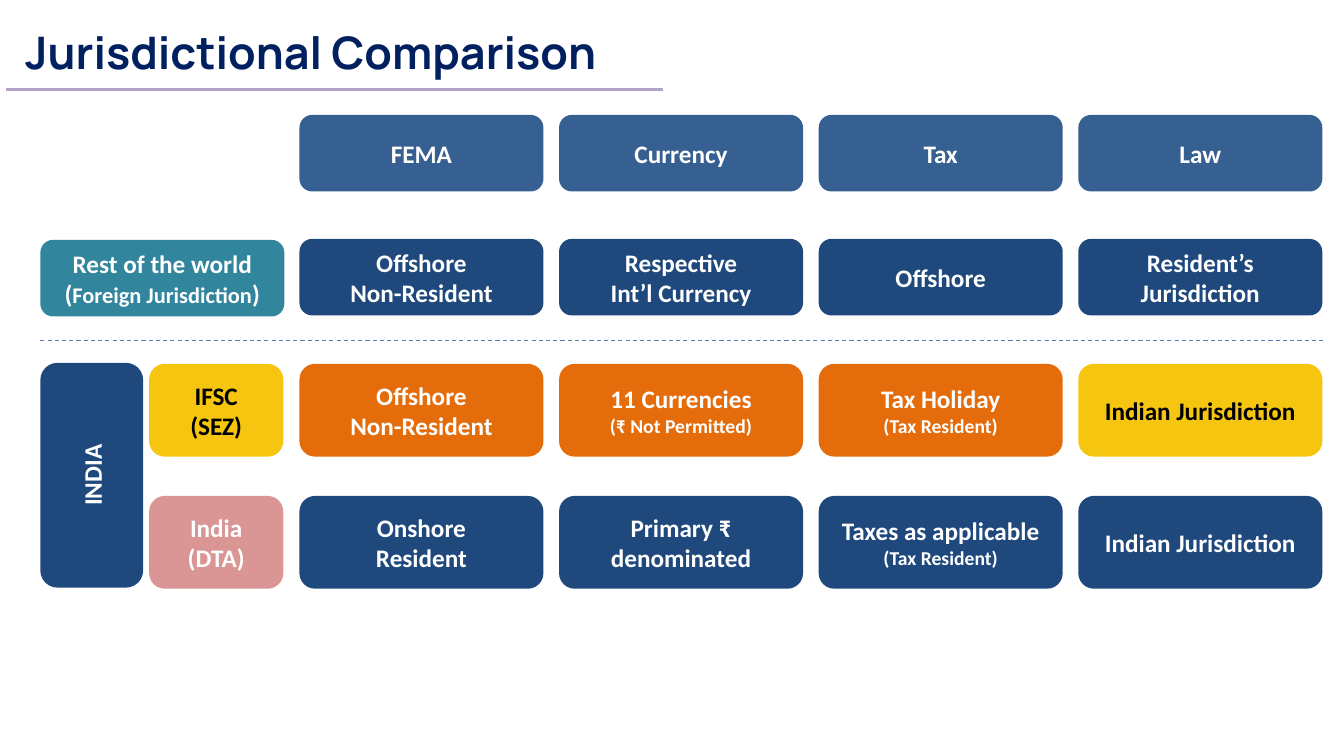
"""Build the jurisdictional comparison slide."""
from dataclasses import dataclass

import pptx
import pptx.dml.color
import pptx.enum.dml
import pptx.enum.shapes
import pptx.enum.text
import pptx.oxml
import pptx.oxml.ns
import pptx.shapes.autoshape
import pptx.slide
import pptx.util

Inches = pptx.util.Inches
Pt = pptx.util.Pt
RGBColor = pptx.dml.color.RGBColor

WHITE = RGBColor(0xFF, 0xFF, 0xFF)
BLACK = RGBColor(0x00, 0x00, 0x00)
INK = RGBColor(0x00, 0x20, 0x60)
LILAC = RGBColor(0xB3, 0xA2, 0xC7)
STEEL = RGBColor(0x37, 0x60, 0x92)
NAVY = RGBColor(0x1F, 0x49, 0x7D)
TEAL = RGBColor(0x31, 0x85, 0x9C)
GOLD = RGBColor(0xF6, 0xC5, 0x10)
ROSE = RGBColor(0xD9, 0x96, 0x94)
ORANGE = RGBColor(0xE4, 0x6C, 0x0A)
BLUE = RGBColor(0x4F, 0x81, 0xBD)

LEFT, STEP, WIDE = 2.97, 2.575, 2.42
LOW, TALL = 0.76, 0.92


@dataclass(frozen=True)
class Line:
    text: str
    size: int = 18
    bracket: bool = False


@dataclass(frozen=True)
class Card:
    lines: tuple[Line, ...]
    fill: RGBColor = NAVY
    ink: RGBColor = WHITE


@dataclass(frozen=True)
class Row:
    top: float
    height: float
    cards: tuple[Card, ...]


@dataclass(frozen=True)
class Label:
    left: float
    top: float
    width: float
    height: float
    card: Card


@dataclass(frozen=True)
class Rule:
    left: float
    right: float
    top: float
    color: RGBColor
    weight: float
    dashed: bool = False


def card(*texts: str, fill: RGBColor = NAVY, ink: RGBColor = WHITE,
         note: str = "") -> Card:
    """Make a card of 18-point lines with an optional smaller note."""
    lines = tuple(Line(text) for text in texts)
    return Card(lines + ((Line(note, 14),) if note else ()), fill, ink)


ROWS = (
    Row(1.14, LOW, tuple(card(name, fill=STEEL)
                         for name in ("FEMA", "Currency", "Tax", "Law"))),
    Row(2.37, LOW, (
        card("Offshore", "Non-Resident"),
        card("Respective", "Int’l Currency"),
        card("Offshore"),
        card("Resident’s Jurisdiction"))),
    Row(3.61, TALL, (
        card("Offshore", "Non-Resident", fill=ORANGE),
        card("11 Currencies", fill=ORANGE, note="(₹ Not Permitted)"),
        card("Tax Holiday", fill=ORANGE, note="(Tax Resident)"),
        card("Indian Jurisdiction", fill=GOLD, ink=BLACK))),
    Row(4.92, TALL, (
        card("Onshore", "Resident"),
        card("Primary ₹ denominated"),
        card("Taxes as applicable", note="(Tax Resident)"),
        card("Indian Jurisdiction"))),
)
WORLD = Card((Line("Rest of the world"),
              Line("Foreign Jurisdiction", 16, True)), TEAL)
LABELS = (
    Label(0.4, 2.38, WIDE, LOW, WORLD),
    Label(1.48, 3.61, 1.33, TALL, card("IFSC", "(SEZ)", fill=GOLD, ink=BLACK)),
    Label(1.48, 4.92, 1.33, TALL, card("India", "(DTA)", fill=ROSE)),
)
INDIA = Label(0.4, 3.6, 1.02, 2.23, card("INDIA"))
RULES = (
    Rule(0.06, 6.58, 0.89, LILAC, 2.25),
    Rule(0.4, 13.13, 3.38, BLUE, 0.75, True),
)


def draw_label(slide: pptx.slide.Slide, label: Label) -> pptx.shapes.autoshape.Shape:
    """Draw one rounded card with its text."""
    shape = slide.shapes.add_shape(
        pptx.enum.shapes.MSO_SHAPE.ROUNDED_RECTANGLE,
        Inches(label.left), Inches(label.top),
        Inches(label.width), Inches(label.height))
    shape.shadow.inherit = False
    shape.fill.solid()
    shape.fill.fore_color.rgb = label.card.fill
    shape.line.fill.background()
    frame = shape.text_frame
    frame.word_wrap = True
    frame.vertical_anchor = pptx.enum.text.MSO_ANCHOR.MIDDLE
    for index, line in enumerate(label.card.lines):
        para = frame.add_paragraph() if index else frame.paragraphs[0]
        para.alignment = pptx.enum.text.PP_ALIGN.CENTER
        set_font(para, "Calibri", 18 if line.bracket else line.size,
                 label.card.ink)
        for part in ("(", line.text, ")") if line.bracket else (line.text,):
            run = para.add_run()
            run.text = part
            if line.bracket and part == line.text:
                run.font.size = Pt(line.size)
    return shape


def set_font(para: pptx.text.text._Paragraph, name: str, size: int,
             color: RGBColor) -> None:
    """Set a bold font on a paragraph."""
    para.font.name = name
    para.font.size = Pt(size)
    para.font.bold = True
    para.font.color.rgb = color


def draw_rule(slide: pptx.slide.Slide, rule: Rule) -> None:
    """Draw one level line."""
    line = slide.shapes.add_connector(
        pptx.enum.shapes.MSO_CONNECTOR.STRAIGHT,
        Inches(rule.left), Inches(rule.top),
        Inches(rule.right), Inches(rule.top))
    line.line.color.rgb = rule.color
    line.line.width = Pt(rule.weight)
    if rule.dashed:
        line.line.dash_style = pptx.enum.dml.MSO_LINE.DASH
    props = line._element.spPr
    props.append(pptx.oxml.parse_xml(
        f'<a:effectLst {pptx.oxml.ns.nsdecls("a")}/>'))


def draw_title(slide: pptx.slide.Slide) -> None:
    """Draw the slide title."""
    box = slide.shapes.add_textbox(
        Inches(0.25), Inches(0.16), Inches(6.49), Inches(0.71))
    frame = box.text_frame
    frame.word_wrap = True
    frame.margin_left = frame.margin_right = 0
    frame.margin_top = frame.margin_bottom = Inches(0.06)
    frame.vertical_anchor = pptx.enum.text.MSO_ANCHOR.MIDDLE
    para = frame.paragraphs[0]
    para.text = "Jurisdictional Comparison"
    set_font(para, "Manrope", 32, INK)


def main() -> None:
    """Build and save the slide."""
    deck = pptx.Presentation()
    deck.slide_width, deck.slide_height = Inches(13.33), Inches(7.5)
    slide = deck.slides.add_slide(deck.slide_layouts[6])
    draw_title(slide)
    for label in LABELS:
        draw_label(slide, label)
    for row in ROWS:
        for index, item in enumerate(row.cards):
            left = LEFT + index * STEP
            draw_label(slide, Label(left, row.top, WIDE, row.height, item))
    india = draw_label(slide, INDIA)
    india.text_frame._txBody.bodyPr.set("vert", "vert270")
    for rule in RULES:
        draw_rule(slide, rule)
    deck.save("out.pptx")


if __name__ == "__main__":
    main()
